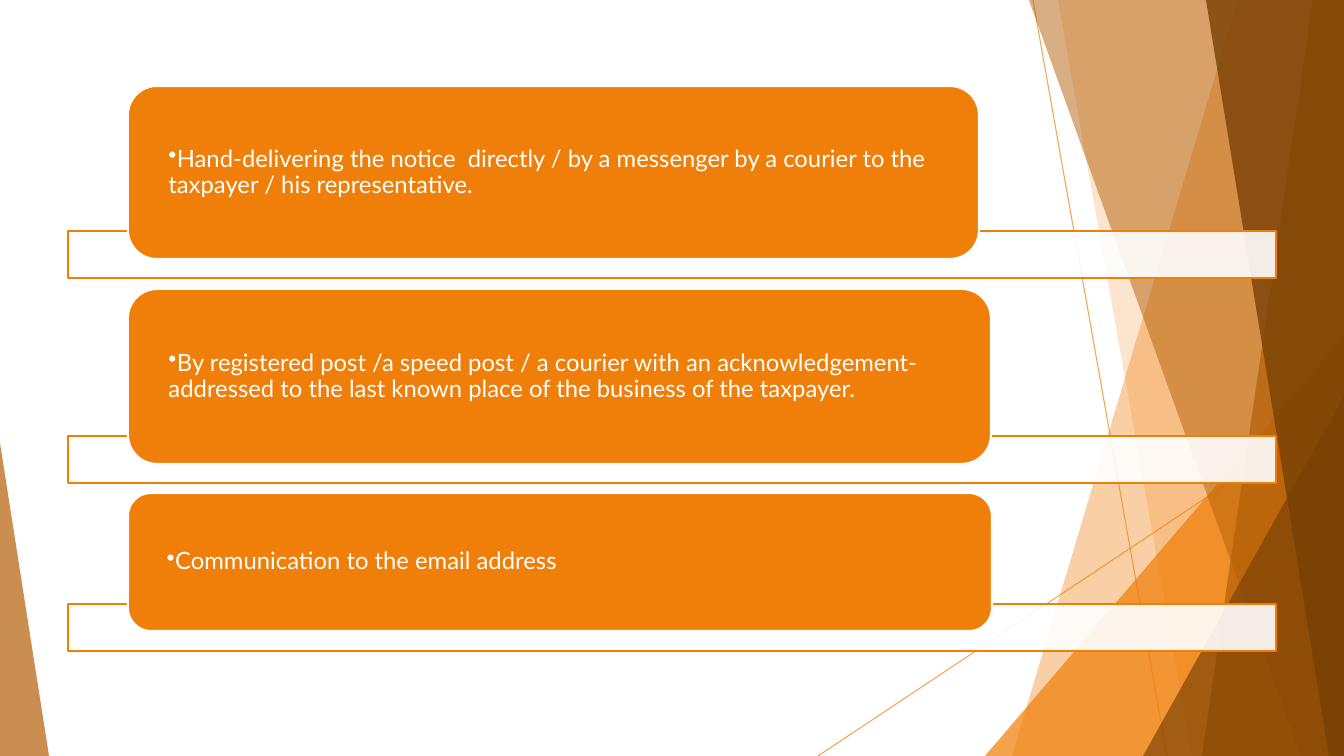
from lxml.etree import SubElement
from pptx import Presentation
from pptx.dml.color import RGBColor
from pptx.enum.shapes import MSO_CONNECTOR, MSO_SHAPE
from pptx.enum.text import MSO_ANCHOR, PP_ALIGN
from pptx.oxml.ns import qn
from pptx.util import Pt

PX = 914400 / 100.8
WIDTH, HEIGHT = 1344, 756
ORANGE, BROWN, DARK, WHITE = "F07F09", "B45F07", "784004", "FFFFFF"


def emu(*lengths):
    return [round(length * PX) for length in lengths]


def paint(fill, color, opacity=100):
    fill.solid()
    fill.fore_color.rgb = RGBColor.from_string(color)
    if opacity < 100:
        color_xml = fill._xPr.find(qn("a:solidFill"))[0]
        SubElement(color_xml, qn("a:alpha"), val=str(opacity * 1000))


deck = Presentation()
deck.slide_width, deck.slide_height = emu(WIDTH, HEIGHT)
page = deck.slides.add_slide(deck.slide_layouts[6])
shapes = page.shapes

for ends in [(1033, 0, 1167, 756), (1344, 406, 818, 756)]:
    ray = shapes.add_connector(MSO_CONNECTOR.STRAIGHT, *emu(*ends))
    ray.line.width = Pt(0.75)
    paint(ray.line.fill, ORANGE, 70)
    SubElement(ray._element.spPr, qn("a:effectLst"))

decorations = [
    ("facet", (1238, 1012), ORANGE, 36),
    ("facet", (1058, 1192), ORANGE, 20),
    ("triangle", (985, 336, 359, 420), ORANGE, 72),
    ("facet", (1029, 1301), BROWN, 50),
    ("facet", (1313, 1202), BROWN, 70),
    ("facet", (1206, 1329), DARK, 80),
    ("triangle", (1143, 396, 201, 360), DARK, 66),
    ("triangle", (0, 443, 49, 313), BROWN, 70),
]
for kind, place, color, opacity in decorations:
    if kind == "facet":
        top_x, bottom_x = place
        outline = shapes.build_freeform(top_x, 0, scale=PX)
        outline.add_line_segments([(WIDTH, 0), (WIDTH, HEIGHT), (bottom_x, HEIGHT)])
        decoration = outline.convert_to_shape()
    else:
        decoration = shapes.add_shape(MSO_SHAPE.ISOSCELES_TRIANGLE, *emu(*place))
        decoration.adjustments[0] = 1 if place[0] else 0
    decoration.shadow.inherit = False
    decoration.line.fill.background()
    paint(decoration.fill, color, opacity)

methods = [
    (231, 86, 851, 173,
     "Hand-delivering the notice  directly / by a messenger by a courier to the "
     "taxpayer / his representative."),
    (436, 289, 863, 175,
     "By registered post /a speed post / a courier with an acknowledgement- "
     "addressed to the last known place of the business of the taxpayer."),
    (604, 493, 864, 138, "Communication to the email address"),
]
for bar_top, box_top, box_width, box_height, wording in methods:
    bar = shapes.add_shape(MSO_SHAPE.RECTANGLE, *emu(68, bar_top, 1208, 47))
    box = shapes.add_shape(MSO_SHAPE.ROUNDED_RECTANGLE,
                           *emu(128, box_top, box_width, box_height))
    for shape, fill, opacity, line in [(bar, WHITE, 90, ORANGE), (box, ORANGE, 100, WHITE)]:
        shape.shadow.inherit = False
        paint(shape.fill, fill, opacity)
        paint(shape.line.fill, line)
        shape.line.width = Pt(1.5)

    frame = box.text_frame
    frame.word_wrap = True
    frame.vertical_anchor = MSO_ANCHOR.MIDDLE
    frame.margin_left, frame.margin_right = emu(32, 32)
    frame.margin_top = frame.margin_bottom = 0
    para = frame.paragraphs[0]
    para.text = wording
    SubElement(para._p.get_or_add_pPr(), qn("a:buChar"), char="•")
    para.alignment = PP_ALIGN.LEFT
    para.line_spacing = 0.9
    para.font.name = "Lato"
    para.font.size = Pt(17)
    para.font.color.rgb = RGBColor.from_string(WHITE)

deck.save("out.pptx")
